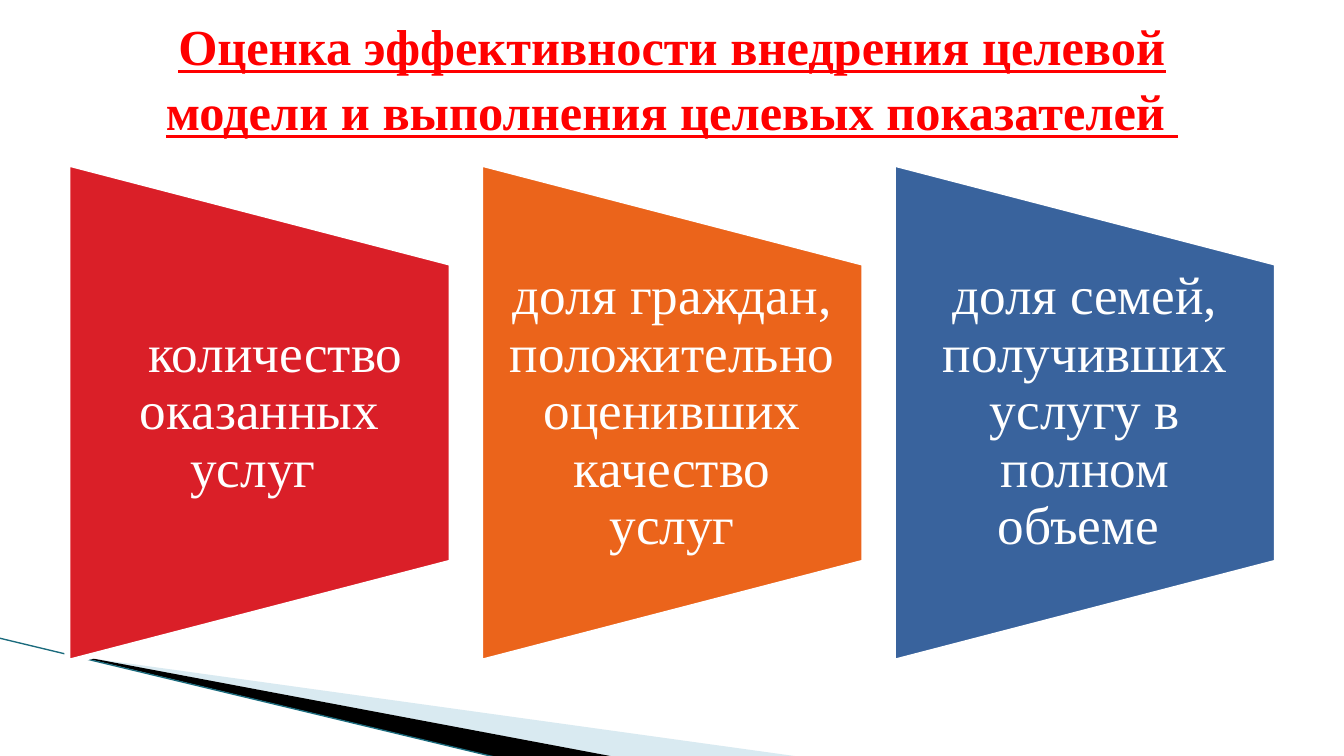
from lxml import etree
from pptx import Presentation
from pptx.dml.color import RGBColor
from pptx.enum.shapes import MSO_CONNECTOR, MSO_SHAPE
from pptx.enum.text import MSO_ANCHOR, MSO_AUTO_SIZE, PP_ALIGN
from pptx.oxml.ns import qn
from pptx.util import Pt

STRAIGHT = MSO_CONNECTOR.STRAIGHT
TRAPEZOID = MSO_SHAPE.FLOWCHART_MANUAL_OPERATION
MIDDLE = MSO_ANCHOR.MIDDLE
NO_AUTOFIT = MSO_AUTO_SIZE.NONE
CENTER = PP_ALIGN.CENTER
SERIF = "Times New Roman"


def rgb(color):
    return RGBColor.from_string(color)


def write(frame, runs, size, color, spacing, inset, bold=False, underline=False):
    frame.word_wrap = True
    frame.auto_size = NO_AUTOFIT
    frame.vertical_anchor = MIDDLE
    frame.margin_left = frame.margin_right = Pt(inset)
    frame.margin_top = frame.margin_bottom = 0
    paragraph = frame.paragraphs[0]
    paragraph.alignment = CENTER
    paragraph.line_spacing = spacing
    paragraph.space_before = Pt(0)
    for text, font_name in runs:
        run = paragraph.add_run()
        run.text = text
        run.font.name = font_name
        run.font.size = Pt(size)
        run.font.bold = bold
        run.font.underline = underline
        run.font.color.rgb = rgb(color)


prs = Presentation()
prs.slide_width, prs.slide_height = Pt(960), Pt(540)
slide = prs.slides.add_slide(prs.slide_layouts[5])
shapes = slide.shapes

# Title
title = shapes.title
title.left, title.top, title.width, title.height = Pt(66), Pt(28.8), Pt(828), Pt(51)
write(title.text_frame,
      [("Оценка эффективности внедрения целевой модели "
        "и выполнения целевых показателей ", SERIF)],
      size=36, color="FF0000", spacing=1.07, inset=7.2, bold=True, underline=True)

# Corner wedges: colour, opacity in percent, outline
wedges = [
    ("A0CBDC", 40, [(52.5, 468.5), (571, 540.5), (438, 540.5), (52.5, 468)]),
    ("000000", 100, [(51, 467.5), (438.5, 540.5), (357, 541.5), (52, 468)]),
]
for color, opacity, corners in wedges:
    points = [(Pt(x), Pt(y)) for x, y in corners]
    builder = shapes.build_freeform(*points[0], scale=1.0)
    builder.add_line_segments(points[1:], close=True)
    wedge = builder.convert_to_shape()
    wedge.shadow.inherit = False
    wedge.fill.solid()
    wedge.fill.fore_color.rgb = rgb(color)
    wedge.line.fill.background()
    if opacity < 100:
        srgb = wedge.fill._xPr.find(".//" + qn("a:srgbClr"))
        etree.SubElement(srgb, qn("a:alpha"), val=str(opacity * 1000))

# Thin line along the wedges
edge = shapes.add_connector(STRAIGHT, Pt(-0.5), Pt(455.8), Pt(356.5), Pt(541.5))
edge.line.color.rgb = rgb("1B6B7D")
edge.line.width = Pt(0.95)
etree.SubElement(edge._element.spPr, qn("a:effectLst"))

# Three indicators: trapezoids turned on their side, with text over them
indicators = [
    ("DA1F28", [(" ", "Noto Sans Mono"), ("количество оказанных услуг ", SERIF)]),
    ("EB641B", [("доля граждан, положительно оценивших качество услуг", SERIF)]),
    ("39639D", [("доля семей, получивших услугу в полном объеме ", SERIF)]),
]
length, breadth, text_height = 356.4, 274.4, 213.8
first_center, pitch, middle = 185.4, 294.8, 294.8
for index, (color, runs) in enumerate(indicators):
    center = first_center + index * pitch
    panel = shapes.add_shape(TRAPEZOID, Pt(center - length / 2), Pt(middle - breadth / 2),
                             Pt(length), Pt(breadth))
    panel.rotation = 270
    panel.shadow.inherit = False
    panel.fill.solid()
    panel.fill.fore_color.rgb = rgb(color)
    panel.line.color.rgb = rgb("FFFFFF")
    panel.line.width = Pt(4.33)
    caption = shapes.add_textbox(Pt(center - breadth / 2), Pt(middle - text_height / 2),
                                 Pt(breadth), Pt(text_height))
    write(caption.text_frame, runs, size=38, color="FFFFFF", spacing=0.9, inset=18.7)

prs.save("out.pptx")
